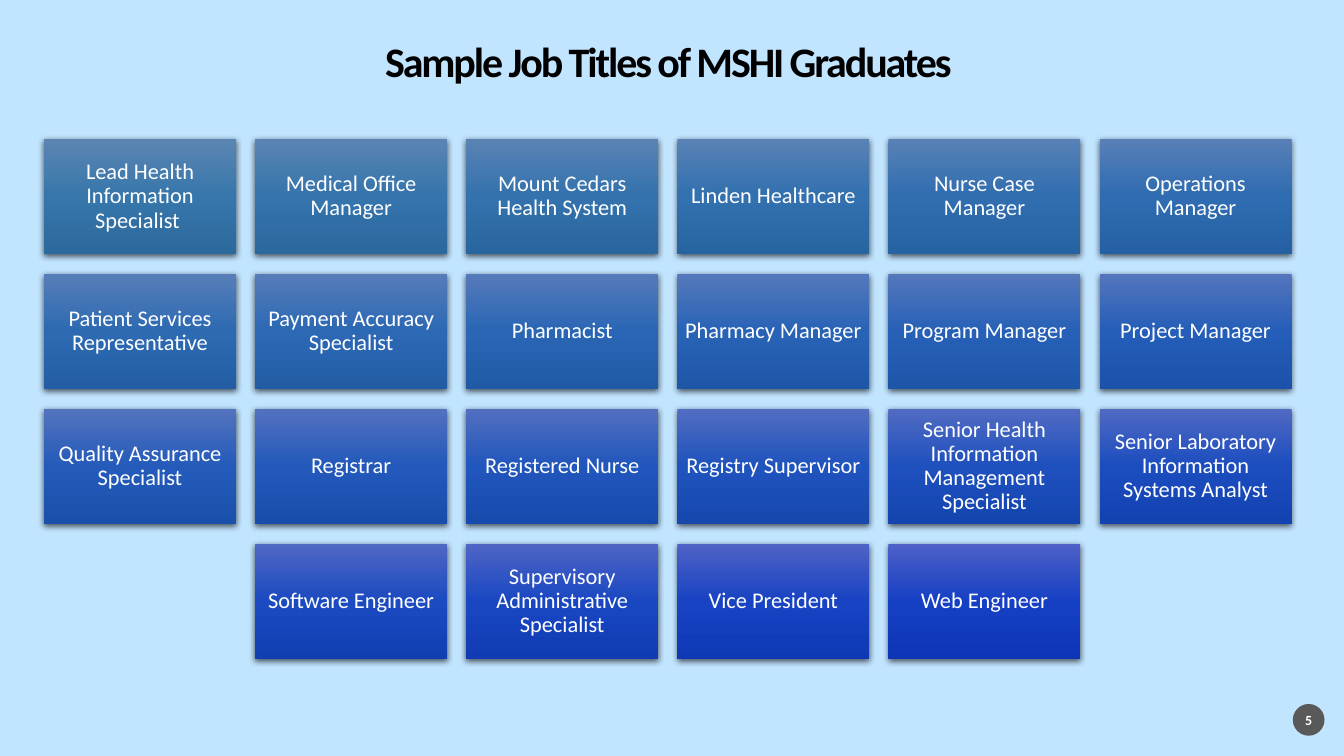
import colorsys
import copy
from dataclasses import dataclass

from lxml import etree
from pptx import Presentation
from pptx import util as u
from pptx.dml import color as dml
from pptx.enum import shapes, text
from pptx.oxml import ns

COLORS = {
    "background": "C1E4FF",
    "title": "000000",
    "light": "FFFFFF",
    "badge": "595959",
    "shadow": "000000",
}
FONT = "Calibri"
FIRST_TONES = ("5B86B2", "3776AB", "2C6A9D")
LAST_TONES = ("4E60C7", "1640C4", "0D35B5")
JOB_ROWS = [
    ["Lead Health Information Specialist ", "Medical Office Manager",
     "Mount Cedars Health System", "Linden Healthcare",
     "Nurse Case Manager", "Operations Manager"],
    ["Patient Services Representative", "Payment Accuracy Specialist",
     "Pharmacist", "Pharmacy Manager", "Program Manager", "Project Manager"],
    ["Quality Assurance Specialist", "Registrar", "Registered Nurse",
     "Registry Supervisor", "Senior Health Information Management Specialist",
     "Senior Laboratory Information Systems Analyst"],
    ["Software Engineer", "Supervisory Administrative Specialist",
     "Vice President", "Web Engineer"],
]
COLUMNS = 6
GRID_LEFT, GRID_TOP = 1.11, 3.5
COLUMN_STEP, ROW_STEP = 5.32, 3.4
TILE_WIDTH, TILE_HEIGHT = 4.84, 2.91


@dataclass
class Tile:
    title: str
    left: float
    top: float
    tones: list[str]


def blend(first: str, last: str, share: float) -> str:
    start, end = (
        colorsys.rgb_to_hls(*(value / 255 for value in bytes.fromhex(tone)))
        for tone in (first, last)
    )
    mixed = [a + (b - a) * share for a, b in zip(start, end)]
    return bytes(round(part * 255) for part in colorsys.hls_to_rgb(*mixed)).hex().upper()


def layout_tiles() -> list[Tile]:
    tiles = []
    count = sum(len(row) for row in JOB_ROWS)
    for row_index, row in enumerate(JOB_ROWS):
        indent = (COLUMNS - len(row)) / 2
        for column, title in enumerate(row):
            share = len(tiles) / (count - 1)
            tones = [blend(a, b, share) for a, b in zip(FIRST_TONES, LAST_TONES)]
            left = GRID_LEFT + (column + indent) * COLUMN_STEP
            tiles.append(Tile(title, left, GRID_TOP + row_index * ROW_STEP, tones))
    return tiles


def write_text(box, wording: str, size: float, color: str, bold: bool = False,
               margin: float = 0, line_spacing: float = 1.0):
    frame = box.text_frame
    frame.word_wrap = True
    frame.vertical_anchor = text.MSO_ANCHOR.MIDDLE
    frame.margin_left = frame.margin_right = u.Cm(margin)
    frame.margin_top = frame.margin_bottom = u.Cm(margin)
    para = frame.paragraphs[0]
    para.add_run().text = wording
    para.alignment = text.PP_ALIGN.CENTER
    para.line_spacing = line_spacing
    para.font.name = FONT
    para.font.size = u.Pt(size)
    para.font.bold = bold
    para.font.color.rgb = dml.RGBColor.from_string(COLORS[color])
    return para


def fill_gradient(box, tones: list[str]) -> None:
    box.fill.gradient()
    box.fill.gradient_angle = 270
    stop_list = box._element.spPr.find(".//" + ns.qn("a:gsLst"))
    stop_list.append(copy.deepcopy(stop_list[-1]))
    for index, (stop, tone) in enumerate(zip(box.fill.gradient_stops, tones)):
        stop.position = index / (len(tones) - 1)
        stop.color.rgb = dml.RGBColor.from_string(tone)


def add_shadow(box) -> None:
    box.shadow.inherit = False
    effects = box._element.spPr.find(ns.qn("a:effectLst"))
    shadow = etree.SubElement(
        effects, ns.qn("a:outerShdw"), blurRad=str(u.Pt(4.5)),
        dist=str(u.Pt(1.5)), dir="5400000", algn="ctr", rotWithShape="0")
    tint = etree.SubElement(shadow, ns.qn("a:srgbClr"), val=COLORS["shadow"])
    etree.SubElement(tint, ns.qn("a:alpha"), val="63000")


def draw_title(page) -> None:
    box = page.shapes.add_textbox(u.Cm(1.11), u.Cm(1.02), u.Cm(31.47), u.Cm(1.19))
    para = write_text(box, "Sample Job Titles of MSHI Graduates", 30, "title",
                      bold=True, line_spacing=0.9)
    para._p.get_or_add_pPr().get_or_add_defRPr().set("spc", "-150")


def draw_badge(page) -> None:
    box = page.shapes.add_shape(shapes.MSO_SHAPE.OVAL, u.Cm(32.58), u.Cm(17.74),
                                u.Cm(0.8), u.Cm(0.8))
    box.shadow.inherit = False
    box.fill.solid()
    box.fill.fore_color.rgb = dml.RGBColor.from_string(COLORS["badge"])
    box.line.fill.background()
    write_text(box, "5", 10, "light", bold=True)


def draw_tile(page, tile: Tile) -> None:
    box = page.shapes.add_shape(shapes.MSO_SHAPE.RECTANGLE, u.Cm(tile.left),
                                u.Cm(tile.top), u.Cm(TILE_WIDTH), u.Cm(TILE_HEIGHT))
    fill_gradient(box, tile.tones)
    box.line.fill.background()
    add_shadow(box)
    write_text(box, tile.title, 16, "light", margin=0.17, line_spacing=0.9)


def main() -> None:
    deck = Presentation()
    deck.slide_width, deck.slide_height = u.Cm(33.87), u.Cm(19.05)
    page = deck.slides.add_slide(deck.slide_layouts[6])
    page.background.fill.solid()
    page.background.fill.fore_color.rgb = dml.RGBColor.from_string(COLORS["background"])
    draw_title(page)
    draw_badge(page)
    for tile in layout_tiles():
        draw_tile(page, tile)
    deck.save("out.pptx")


if __name__ == "__main__":
    main()
